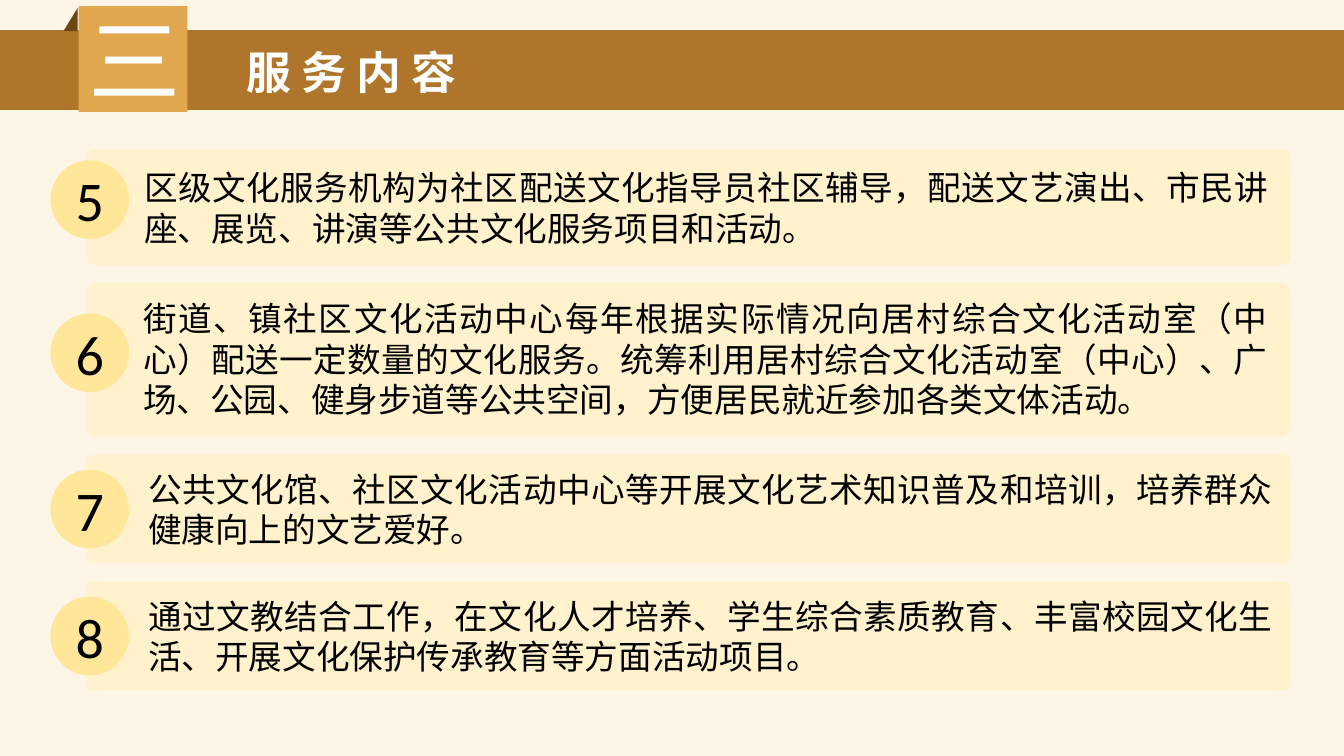
from dataclasses import dataclass

from lxml.etree import SubElement
from pptx import Presentation
from pptx.dml.color import RGBColor
from pptx.enum.shapes import MSO_SHAPE as Form
from pptx.enum.text import MSO_ANCHOR as Anchor, MSO_AUTO_SIZE as Fit, PP_ALIGN as Align
from pptx.oxml.ns import qn
from pptx.util import Inches, Pt

SANS = "Noto Sans CJK SC"
Box = tuple[float, float, float, float]


@dataclass
class Card:
    mark: str
    text: str
    top: float
    high: float
    left: float  # text box
    head: float
    tall: float
    disc: float  # top of the number disc


CARDS = [
    Card("5", "区级文化服务机构为社区配送文化指导员社区辅导，配送文艺演出、市民讲座、展览、"
         "讲演等公共文化服务项目和活动。", 1.48, 1.15, 1.33, 1.61, 0.91, 1.59),
    Card("6", "街道、镇社区文化活动中心每年根据实际情况向居村综合文化活动室（中心）配送一定数量的"
         "文化服务。统筹利用居村综合文化活动室（中心）、广场、公园、健身步道等公共空间，"
         "方便居民就近参加各类文体活动。", 2.81, 1.52, 1.32, 2.91, 1.31, 3.11),
    Card("7", "公共文化馆、社区文化活动中心等开展文化艺术知识普及和培训，培养群众健康向上的"
         "文艺爱好。", 4.51, 1.08, 1.37, 4.6, 0.91, 4.66),
    Card("8", "通过文教结合工作，在文化人才培养、学生综合素质教育、丰富校园文化生活、"
         "开展文化保护传承教育等方面活动项目。", 5.77, 1.08, 1.37, 5.86, 0.91, 5.92),
]


def paint(fill, color: str) -> None:
    fill.solid()
    fill.fore_color.rgb = RGBColor.from_string(color)


def shape(shapes, form: Form, box: Box, color: str):
    item = shapes.add_shape(form, *map(Inches, box))
    item.shadow.inherit = False
    paint(item.fill, color)
    item.line.fill.background()
    return item


def write(item, text: str, *, size: float, font: str = SANS, color: str = "000000",
          bold: bool = False, align: Align = Align.LEFT, anchor: Anchor = Anchor.TOP,
          wrap: bool = True, fit: Fit = Fit.SHAPE_TO_FIT_TEXT) -> None:
    frame = item.text_frame
    frame.word_wrap, frame.auto_size, frame.vertical_anchor = wrap, fit, anchor
    line = frame.paragraphs[0]
    line.alignment = align
    run = line.add_run()
    run.text = text
    run.font.size, run.font.name, run.font.bold = Pt(size), font, bold
    paint(run.font.fill, color)
    east = SubElement(run.font._element, qn("a:ea"))
    east.set("typeface", font)


def banner(slide) -> None:
    # Bar, number tile and its folded corner
    shapes = slide.shapes.add_group_shape().shapes
    shape(shapes, Form.RECTANGLE, (0, 0.3, 13.33, 0.79), "AF762B")
    shape(shapes, Form.RECTANGLE, (0.78, 0.06, 1.08, 1.05), "E0A74E")
    fold = shape(shapes, Form.RIGHT_TRIANGLE, (0.63, 0.08, 0.14, 0.23), "684712")
    fold.element.spPr.find(qn("a:xfrm")).set("flipH", "1")
    mark = shapes.add_textbox(*map(Inches, (0.78, -0.02, 1.32, 1.21)))
    write(mark, "三", size=66, font="Roboto", color="FFFFFF")

    # Title, brought in front of the bar
    title = slide.shapes.title
    title.left, title.top, title.width, title.height = map(Inches, (2.34, 0.39, 2.4, 0.64))
    write(title, "服 务 内 容", size=32, color="FFFFFF", bold=True, wrap=False)
    title.element.getparent().append(title.element)


def draw(slide, card: Card) -> None:
    shapes = slide.shapes.add_group_shape().shapes
    panel = shape(shapes, Form.ROUNDED_RECTANGLE, (0.86, card.top, 11.94, card.high), "FFF2CC")
    panel.adjustments[0] = 0.07
    body = shapes.add_textbox(*map(Inches, (card.left, card.head, 11.35, card.tall)))
    write(body, card.text, size=24, align=Align.JUSTIFY)
    disc = shape(shapes, Form.OVAL, (0.5, card.disc, 0.78, 0.78), "FFE699")
    write(disc, card.mark, size=40, font="Calibri", align=Align.CENTER,
          anchor=Anchor.MIDDLE, fit=Fit.NONE)


def main() -> None:
    deck = Presentation()
    deck.slide_width, deck.slide_height = Inches(13.33), Inches(7.5)
    slide = deck.slides.add_slide(deck.slide_layouts[5])
    paint(slide.background.fill, "FDF6E6")
    banner(slide)
    for card in CARDS:
        draw(slide, card)
    deck.save("out.pptx")


if __name__ == "__main__":
    main()
